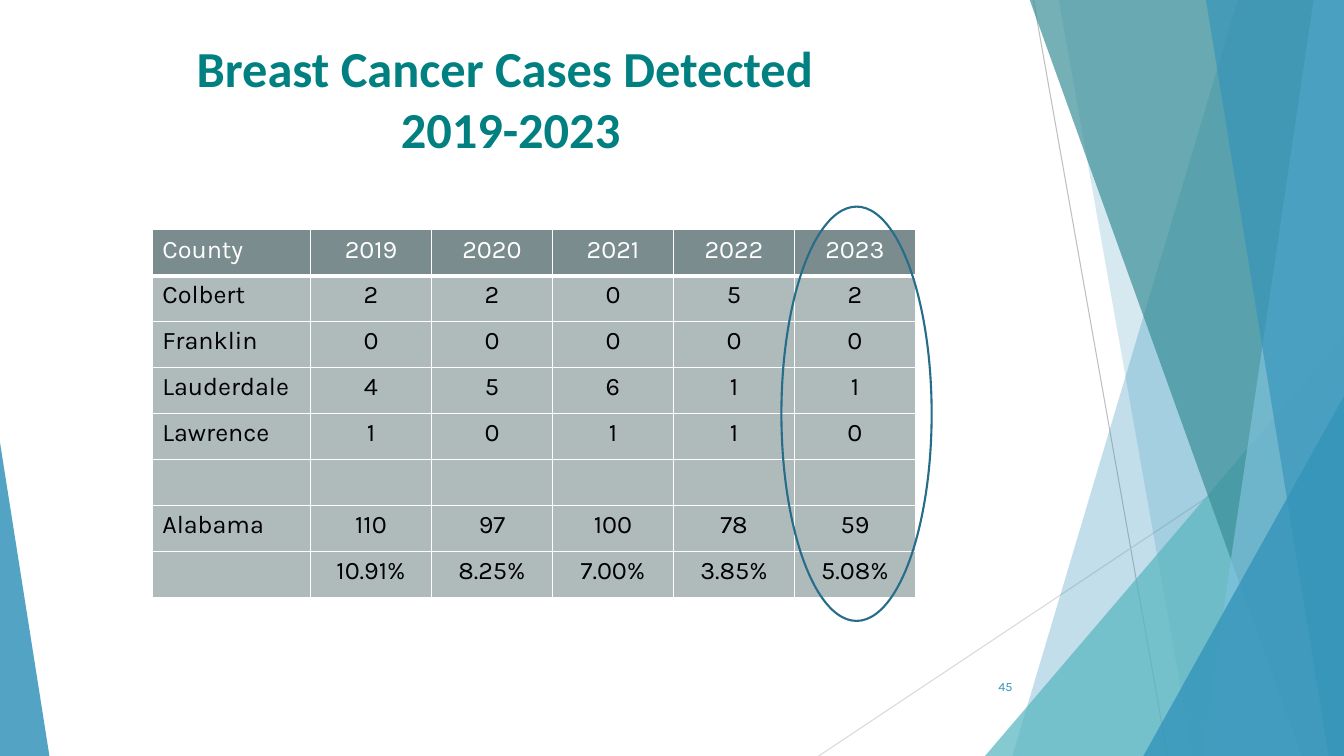
import pptx
import pptx.util
import pptx.dml.color
import pptx.enum.shapes
import pptx.enum.text
import pptx.oxml
import pptx.oxml.ns
import lxml.etree

Inches, Pt = pptx.util.Inches, pptx.util.Pt
RGB = pptx.dml.color.RGBColor.from_string
SHAPE = pptx.enum.shapes.MSO_SHAPE
ALIGN = pptx.enum.text.PP_ALIGN
ANCHOR = pptx.enum.text.MSO_ANCHOR
qn = pptx.oxml.ns.qn

COLORS = {
    "blue": "3494BA", "aqua": "58B6C0", "teal": "3A8F98", "sky": "7FC1DB",
    "ring": "266D8A", "title": "008080", "header": "7A8C8E", "body": "AFBABB",
    "white": "FFFFFF", "black": "000000", "gray": "BFBFBF", "pale": "D9D9D9",
}


def fill_facet(sp, color, alpha):
    sp.shadow.inherit = False
    sp.line.fill.background()
    sp.fill.solid()
    sp.fill.fore_color.rgb = RGB(COLORS[color])
    clr = sp.fill._xPr.find(".//" + qn("a:srgbClr"))
    lxml.etree.SubElement(clr, qn("a:alpha"), val=str(alpha * 1000))


def style_font(p, name, size, color, bold=False):
    for font in [p.font] + [r.font for r in p.runs]:
        font.name = name
        font.size = Pt(size)
        font.bold = bold
        font.color.rgb = RGB(COLORS[color])


prs = pptx.Presentation()
prs.slide_width, prs.slide_height = Inches(13.33), Inches(7.5)
s = prs.slides.add_slide(prs.slide_layouts[5])

for x1, y1, x2, y2, color in [
    (10.25, 0, 11.58, 7.5, "gray"),
    (13.33, 4.03, 8.12, 7.5, "pale"),
]:
    cn = s.shapes.add_connector(
        pptx.enum.shapes.MSO_CONNECTOR.STRAIGHT,
        Inches(x1), Inches(y1), Inches(x2), Inches(y2))
    cn.line.color.rgb = RGB(COLORS[color])
    cn.line.width = Pt(0.75)
    lxml.etree.SubElement(cn._element.spPr, qn("a:effectLst"))

facets = [
    ("band", (12.28, 10.04), "blue", 30),
    ("band", (10.5, 11.83), "blue", 20),
    ("triangle", (9.77, 3.33, 3.56, 4.17, 1), "aqua", 72),
    ("band", (10.21, 12.91), "teal", 70),
    ("band", (13.03, 11.92), "sky", 70),
    ("band", (11.96, 13.18), "blue", 65),
    ("triangle", (11.34, 3.93, 1.99, 3.57, 1), "blue", 80),
    ("triangle", (0, 4.39, 0.49, 3.11, 0), "blue", 85),
]
for kind, geometry, color, alpha in facets:
    if kind == "band":
        top_x, bottom_x = geometry
        fb = s.shapes.build_freeform(Inches(top_x), Inches(-0.01))
        fb.add_line_segments([
            (Inches(x), Inches(y))
            for x, y in [(13.33, -0.01), (13.33, 7.5), (bottom_x, 7.5)]
        ], close=True)
        sp = fb.convert_to_shape()
    else:
        x, y, w, h, apex = geometry
        sp = s.shapes.add_shape(
            SHAPE.ISOSCELES_TRIANGLE, Inches(x), Inches(y), Inches(w), Inches(h))
        sp.adjustments[0] = apex
    fill_facet(sp, color, alpha)

title = s.shapes.title
title.left, title.top = Inches(-0.02), Inches(0.32)
title.width, title.height = Inches(10.17), Inches(1.5)
tf = title.text_frame
tf.text = "Breast Cancer Cases Detected \v2019-2023"
tf.vertical_anchor = ANCHOR.TOP
tf.auto_size = pptx.enum.text.MSO_AUTO_SIZE.NONE
p = tf.paragraphs[0]
p.alignment = ALIGN.CENTER
style_font(p, "Calibri", 36, "title", True)

tb = s.shapes.add_textbox(Inches(9.39), Inches(6.61), Inches(0.75), Inches(0.4))
tf = tb.text_frame
tf.word_wrap = True
tf.vertical_anchor = ANCHOR.MIDDLE
p = tf.paragraphs[0]
p.text = "45"
p.alignment = ALIGN.RIGHT
style_font(p, "Karla", 9, "blue")

rows = [
    ["County", "2019", "2020", "2021", "2022", "2023"],
    ["Colbert", "2", "2", "0", "5", "2"],
    ["Franklin", "0", "0", "0", "0", "0"],
    ["Lauderdale", "4", "5", "6", "1", "1"],
    ["Lawrence", "1", "0", "1", "1", "0"],
    [""] * 6,
    ["Alabama", "110", "97", "100", "78", "59"],
    ["", "10.91%", "8.25%", "7.00%", "3.85%", "5.08%"],
]
table = s.shapes.add_table(
    len(rows), 6, Inches(1.51), Inches(2.28), Inches(7.55), Inches(3.65)).table
for i, col in enumerate(table.columns):
    col.width = Inches(1.2 if i else 1.57)
for i, values in enumerate(rows):
    table.rows[i].height = Inches(3.65 / len(rows))
    for j, value in enumerate(values):
        cell = table.cell(i, j)
        p = cell.text_frame.paragraphs[0]
        if value:
            p.text = value
        p.alignment = ALIGN.CENTER if j else ALIGN.LEFT
        style_font(p, "Karla", 18, "black" if i else "white")
        tcPr = cell._tc.get_or_add_tcPr()
        for side in "LRTB":
            width = Pt(3 if i == 0 and side == "B" else 1)
            ln = lxml.etree.SubElement(tcPr, qn("a:ln" + side), w=str(width))
            fill = lxml.etree.SubElement(ln, qn("a:solidFill"))
            lxml.etree.SubElement(fill, qn("a:srgbClr"), val=COLORS["white"])
        cell.fill.solid()
        cell.fill.fore_color.rgb = RGB(COLORS["body" if i else "header"])

ring = s.shapes.add_shape(
    SHAPE.OVAL, Inches(7.75), Inches(2.05), Inches(1.49), Inches(4.11))
ring.shadow.inherit = False
ring.fill.background()
ring.line.color.rgb = RGB(COLORS["ring"])
ring.line.width = Pt(1.5)

prs.save("out.pptx")
